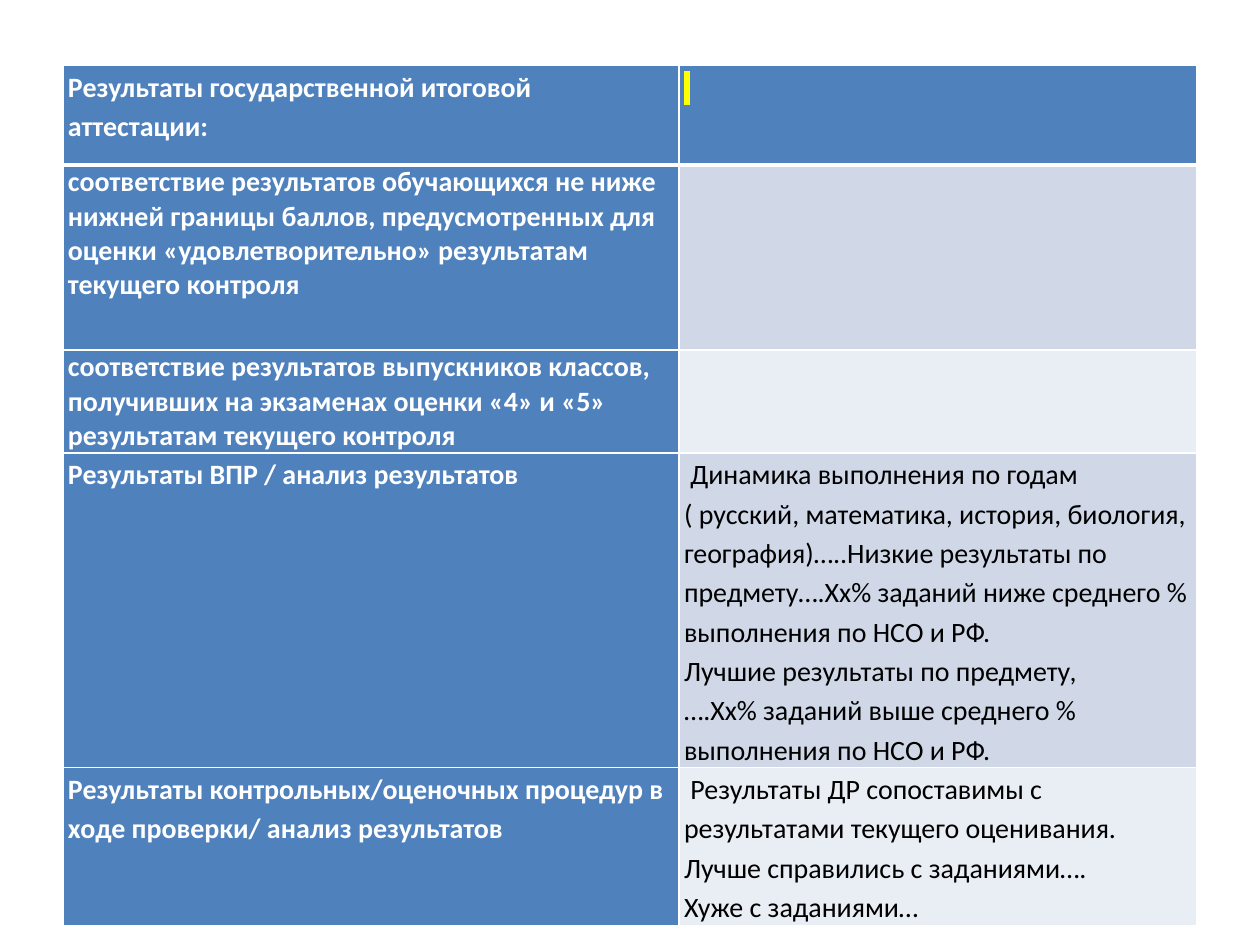
"""Build a slide with a table of assessment results."""
from dataclasses import dataclass

from lxml.etree import SubElement
from pptx import Presentation
from pptx.dml.color import RGBColor
from pptx.oxml.ns import qn
from pptx.util import Cm, Pt

WHITE = RGBColor(0xFF, 0xFF, 0xFF)
BLACK = RGBColor(0x00, 0x00, 0x00)
BLUE = RGBColor(0x4F, 0x81, 0xBD)
DARK_BAND = RGBColor(0xD0, 0xD8, 0xE8)
LIGHT_BAND = RGBColor(0xE9, 0xED, 0xF4)
YELLOW = RGBColor(0xFF, 0xFF, 0x00)
COLUMN_WIDTHS = (Cm(12.42), Cm(10.44))


@dataclass(frozen=True)
class ResultRow:
    height: Cm
    topic: str
    findings: str
    band: RGBColor
    spacing: float = 1.15
    space_after: int = 0


RESULTS = (
    ResultRow(Cm(2.01), "Результаты государственной итоговой аттестации:", " ", BLUE),
    ResultRow(
        Cm(3.73),
        "соответствие результатов обучающихся не ниже нижней границы баллов, "
        "предусмотренных для оценки «удовлетворительно» результатам текущего контроля",
        "", DARK_BAND, 1.0),
    ResultRow(
        Cm(1.96),
        "соответствие результатов выпускников классов, получивших на экзаменах "
        "оценки «4» и «5» результатам текущего контроля",
        "", LIGHT_BAND, 1.0),
    ResultRow(
        Cm(6.25), "Результаты ВПР / анализ результатов",
        " Динамика выполнения по годам ( русский, математика, история, биология, "
        "география)…..Низкие результаты по предмету….Хх% заданий ниже среднего % "
        "выполнения по НСО и РФ.\n"
        "Лучшие результаты по предмету,\n"
        "….Хх% заданий выше среднего % выполнения по НСО и РФ.",
        DARK_BAND, space_after=10),
    ResultRow(
        Cm(3.18),
        "Результаты контрольных/оценочных процедур в ходе проверки/ анализ результатов",
        " Результаты ДР сопоставимы с результатами текущего оценивания. "
        "Лучше справились с заданиями….\n"
        "Хуже с заданиями…",
        LIGHT_BAND, space_after=10),
)


def add_solid_fill(parent, tag: str, color: RGBColor) -> None:
    SubElement(SubElement(parent, qn(tag)), qn("a:srgbClr"), val=str(color))


def set_borders(cell, top: Pt, bottom: Pt) -> None:
    properties = cell._tc.get_or_add_tcPr()
    widths = {"a:lnL": Pt(1), "a:lnR": Pt(1), "a:lnT": top, "a:lnB": bottom}
    for tag, width in widths.items():
        add_solid_fill(SubElement(properties, qn(tag), w=str(width)), "a:solidFill", WHITE)


def fill_cell(cell, text: str, background: RGBColor, color: RGBColor, bold: bool,
              spacing: float, space_after: int) -> None:
    cell.margin_left = cell.margin_right = Cm(0.1)
    cell.margin_top = cell.margin_bottom = 0
    cell.text_frame.text = text
    for paragraph in cell.text_frame.paragraphs:
        paragraph.line_spacing = spacing
        paragraph.space_after = Pt(space_after)
        paragraph.font.size = Pt(16)
        for run in paragraph.runs:
            run.font.name = "Calibri"
            run.font.size = Pt(16)
            run.font.bold = bold
            run.font.color.rgb = color
    cell.fill.solid()
    cell.fill.fore_color.rgb = background


def highlight(run, color: RGBColor) -> None:
    properties = run.font._element
    add_solid_fill(properties, "a:highlight", color)
    properties.find(qn("a:solidFill")).addnext(properties.find(qn("a:highlight")))


def main() -> None:
    presentation = Presentation()
    presentation.slide_width, presentation.slide_height = Cm(25.4), Cm(19.05)
    slide = presentation.slides.add_slide(presentation.slide_layouts[6])
    results = slide.shapes.add_table(
        len(RESULTS), len(COLUMN_WIDTHS), Cm(1.27), Cm(1.32), sum(COLUMN_WIDTHS),
        sum(result.height for result in RESULTS)).table
    for column, width in zip(results.columns, COLUMN_WIDTHS):
        column.width = width
    for index, result in enumerate(RESULTS):
        results.rows[index].height = result.height
        topic, findings = results.rows[index].cells
        fill_cell(topic, result.topic, BLUE, WHITE, True, result.spacing, result.space_after)
        fill_cell(findings, result.findings, result.band, BLACK, False, result.spacing, 0)
        for cell in (topic, findings):
            borders = (Pt(3) if index == 1 else Pt(1), Pt(3) if index == 0 else Pt(1))
            fill = cell._tc.tcPr.find(qn("a:solidFill"))
            set_borders(cell, *borders)
            cell._tc.tcPr.append(fill)
    highlight(results.cell(0, 1).text_frame.paragraphs[0].runs[0], YELLOW)
    presentation.save("out.pptx")


if __name__ == "__main__":
    main()
